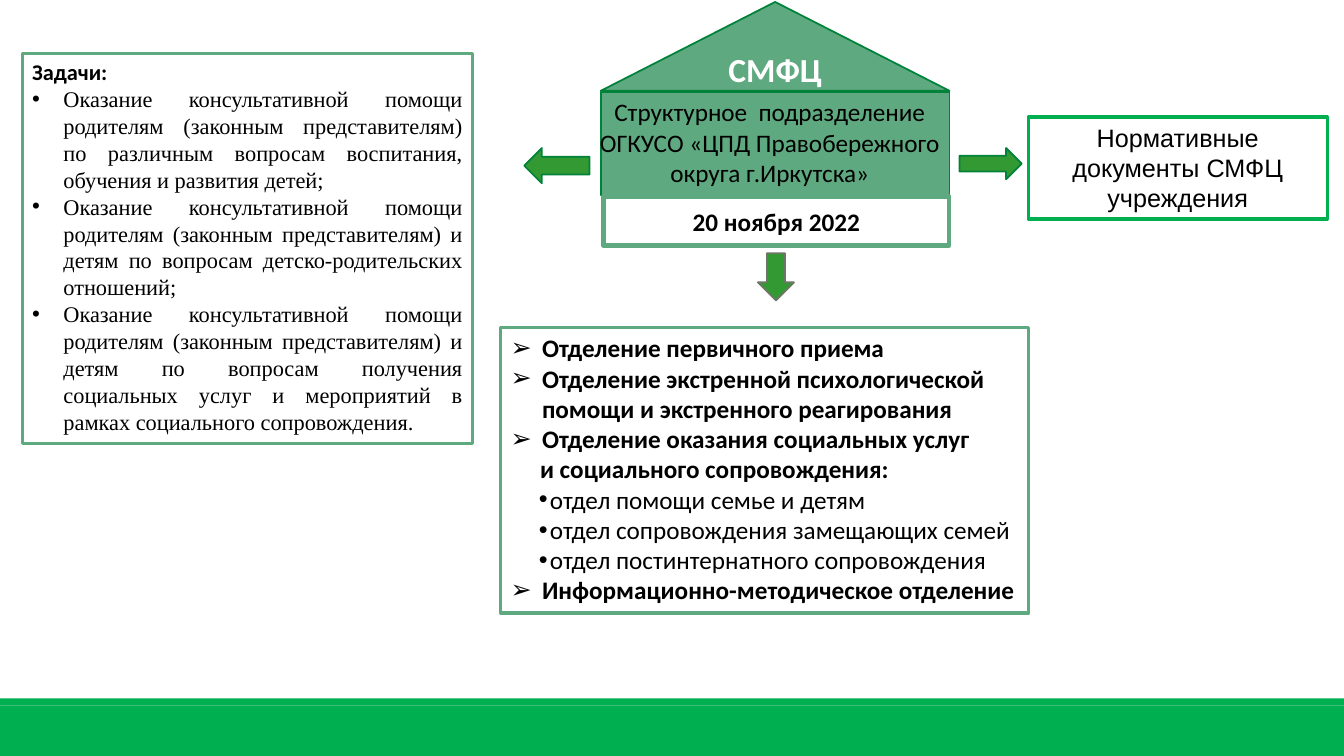
from lxml.etree import SubElement
from pptx import Presentation
from pptx.dml.color import RGBColor
from pptx.enum.shapes import MSO_SHAPE as SHAPE
from pptx.enum.text import MSO_ANCHOR as ANCHOR, PP_ALIGN as ALIGN
from pptx.oxml.ns import qn
from pptx.util import Cm, Pt

COLORS = {
    "footer": "00B050", "sage": "5FA980", "edge": "00823B", "arrow": "339933",
    "gray": "6D7665", "white": "FFFFFF", "black": "000000",
}

# Formats of paragraphs; indent is (left margin, first line) in cm
BASE = {"font": "Calibri", "size": 18, "bold": False, "color": "black",
        "align": ALIGN.LEFT, "indent": (0, 0), "bullet": None}
CENTER = BASE | {"align": ALIGN.CENTER}
DATE = CENTER | {"bold": True}
TITLE = DATE | {"size": 24, "color": "white"}
NORMS = CENTER | {"font": "Arial"}
UNIT = BASE | {"bold": True, "indent": (0.79, -0.79), "bullet": "➢"}
UNIT_REST = BASE | {"bold": True, "indent": (0, 0.74)}
SUBUNIT = BASE | {"indent": (0.99, -0.28), "bullet": "•"}
TASK_HEAD = BASE | {"size": 16, "bold": True, "align": ALIGN.JUSTIFY}
TASK = TASK_HEAD | {"font": "Times New Roman", "bold": False,
                    "indent": (0.79, -0.79), "bullet": "•"}

HELP = "Оказание консультативной помощи родителям (законным представителям) "
TASKS = [
    ("Задачи:", TASK_HEAD),
    (HELP + "по различным вопросам воспитания, обучения и развития детей;", TASK),
    (HELP + "и детям по вопросам детско-родительских отношений;", TASK),
    (HELP + "и детям по вопросам получения социальных услуг и мероприятий "
            "в рамках социального сопровождения.", TASK),
]
UNITS = [
    ("Отделение первичного приема", UNIT),
    ("Отделение экстренной психологической помощи и экстренного реагирования", UNIT),
    ("Отделение оказания социальных услуг", UNIT),
    ("и социального сопровождения:", UNIT_REST),
    ("отдел помощи семье и детям", SUBUNIT),
    ("отдел сопровождения замещающих семей", SUBUNIT),
    ("отдел постинтернатного сопровождения", SUBUNIT),
    ("Информационно-методическое отделение", UNIT),
]
CENTER_NAME = [("Структурное  подразделение ОГКУСО «ЦПД Правобережного "
                "округа г.Иркутска»", CENTER)]
NORM_DOCS = [("Нормативные документы СМФЦ учреждения", NORMS)]

SLIDE_W, SLIDE_H = 33.87, 19.05
FOOTER_TOP, FOOTER_SPLIT = 17.6, 17.78
HOUSE_X, HOUSE_W, WALL_Y = 15.14, 8.79, 2.31
ARROW_Y = 3.73

# preset, (left, top, width, height) in cm, fill, line, line width, anchor, text
SHAPES = [
    (SHAPE.RECTANGLE, (0, FOOTER_SPLIT, SLIDE_W, SLIDE_H - FOOTER_SPLIT),
     "footer", None, 0, ANCHOR.TOP, []),
    (SHAPE.RECTANGLE, (0, FOOTER_TOP, SLIDE_W, FOOTER_SPLIT - FOOTER_TOP),
     "footer", None, 0, ANCHOR.TOP, []),
    (SHAPE.ISOSCELES_TRIANGLE, (HOUSE_X, 0.05, HOUSE_W, 2.24),
     "sage", "edge", 1.25, ANCHOR.MIDDLE, [("СМФЦ", TITLE)]),
    (SHAPE.RECTANGLE, (HOUSE_X, WALL_Y, HOUSE_W, 2.62),
     "sage", "edge", 1.25, ANCHOR.TOP, []),
    (SHAPE.RECTANGLE, (25.91, 2.95, 7.54, 2.57),
     None, "footer", 2.25, ANCHOR.TOP, NORM_DOCS),
    (None, (14.61, WALL_Y, 9.58, 2.57),
     None, None, 0, ANCHOR.TOP, CENTER_NAME),
    (SHAPE.DOWN_ARROW, (19.1, 6.38, 0.91, 1.19),
     "arrow", "gray", 1.25, ANCHOR.TOP, []),
    (SHAPE.RECTANGLE, (15.21, 4.95, 8.71, 1.24),
     "white", "sage", 3, ANCHOR.MIDDLE, [("20 ноября 2022", DATE)]),
    (SHAPE.RECTANGLE, (12.62, 8.26, 13.31, 7.19),
     None, "sage", 2.25, ANCHOR.TOP, UNITS),
    (SHAPE.RIGHT_ARROW, (24.18, ARROW_Y, 1.57, 0.79),
     "arrow", "edge", 1.25, ANCHOR.TOP, []),
    (SHAPE.LEFT_ARROW, (13.21, ARROW_Y, 1.65, 0.89),
     "arrow", "edge", 1.25, ANCHOR.TOP, []),
    (SHAPE.RECTANGLE, (0.56, 1.35, 11.35, 9.83),
     None, "sage", 2.25, ANCHOR.TOP, TASKS),
]


def rgb(name):
    return RGBColor.from_string(COLORS[name])


def paint(fill, color):
    """Make the fill solid, or empty when there is no color."""
    if color:
        fill.solid()
        fill.fore_color.rgb = rgb(color)
    else:
        fill.background()


def format_paragraph(p, text, fmt):
    p.alignment = fmt["align"]
    pPr = p._p.get_or_add_pPr()
    for key, value in zip(("marL", "indent"), fmt["indent"]):
        pPr.set(key, str(Cm(value)))
    if fmt["bullet"]:
        SubElement(pPr, qn("a:buFont")).set("typeface", "Arial")
        SubElement(pPr, qn("a:buChar")).set("char", fmt["bullet"])
    r = p.add_run()
    r.text = text
    font = {"name": fmt["font"], "size": Pt(fmt["size"]), "bold": fmt["bold"]}
    for key, value in font.items():
        setattr(r.font, key, value)
    r.font.color.rgb = rgb(fmt["color"])


def write(tf, paragraphs, anchor):
    tf.word_wrap = True
    tf.vertical_anchor = anchor
    for i, (text, fmt) in enumerate(paragraphs):
        format_paragraph(tf.add_paragraph() if i else tf.paragraphs[0], text, fmt)


def add_part(slide, preset, box, fill, line, width, anchor, paragraphs):
    """Add a preset shape, or a text box when there is no preset."""
    place = [Cm(v) for v in box]
    if preset is None:
        sp = slide.shapes.add_textbox(*place)
    else:
        sp = slide.shapes.add_shape(preset, *place)
        sp.shadow.inherit = False
        paint(sp.fill, fill)
        paint(sp.line.fill, line)
        if line:
            sp.line.width = Pt(width)
    if paragraphs:
        write(sp.text_frame, paragraphs, anchor)


def main():
    prs = Presentation()
    prs.slide_width, prs.slide_height = Cm(SLIDE_W), Cm(SLIDE_H)
    slide = prs.slides.add_slide(prs.slide_layouts[6])
    for part in SHAPES:
        add_part(slide, *part)
    prs.save("out.pptx")


if __name__ == "__main__":
    main()
